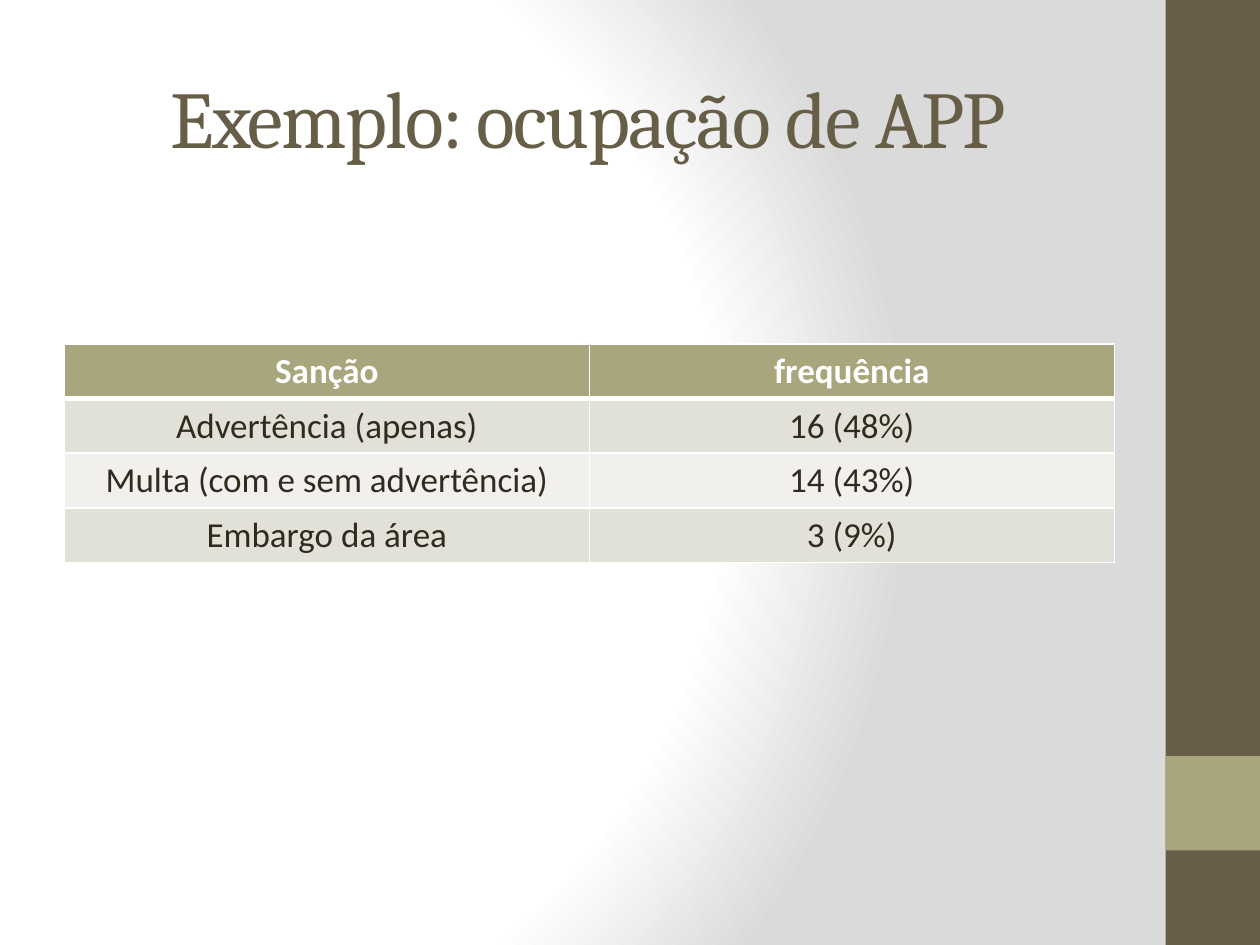
import pptx
import pptx.util
import pptx.dml.color
import pptx.enum.shapes
import pptx.enum.text
import pptx.oxml
import pptx.oxml.ns

Pt = pptx.util.Pt
ALIGN = pptx.enum.text.PP_ALIGN
ANCHOR = pptx.enum.text.MSO_ANCHOR
RECT = pptx.enum.shapes.MSO_SHAPE.RECTANGLE

HEX = {
    "brown": "675E47",
    "olive": "A9A57C",
    "ink": "2F2B20",
    "white": "FFFFFF",
    "gray": "DADADA",
    "dark": "E2E1D7",
    "light": "F1F0EC",
}
ROWS = [
    ("Sanção", "frequência"),
    ("Advertência (apenas)", "16 (48%)"),
    ("Multa (com e sem advertência)", "14 (43%)"),
    ("Embargo da área", "3 (9%)"),
]


def rgb(name):
    return pptx.dml.color.RGBColor.from_string(HEX[name])


def node(text):
    space = pptx.oxml.ns.nsdecls("a")
    return pptx.oxml.parse_xml(text.replace(">", f" {space}>", 1))


def style(para, font, size, color, bold=False):
    para.alignment = ALIGN.CENTER
    for run in para.runs:
        run.font.name = font
        run.font.size = Pt(size)
        run.font.bold = bold
        run.font.color.rgb = rgb(color)


def backdrop(slide):
    # Radial fade from white to gray
    fill = slide.background.fill
    fill.gradient()
    stops = "".join(
        f'<a:gs pos="{pos}000"><a:srgbClr val="{HEX[name]}"/></a:gs>'
        for pos, name in ((0, "white"), (75, "white"), (100, "gray")))
    fade = node(
        f'<a:gradFill rotWithShape="1"><a:gsLst>{stops}</a:gsLst>'
        '<a:path path="circle"><a:fillToRect l="20000" t="50000" '
        'r="100000" b="50000"/></a:path></a:gradFill>')
    old = slide.element.find(".//" + pptx.oxml.ns.qn("a:gradFill"))
    old.getparent().replace(old, fade)


def sidebar(slide, left, top, width, height):
    # Full band, with a square accent one side above its foot
    accent = top + height - 2 * width
    for y, tall, color in ((top, height, "brown"), (accent, width, "olive")):
        band = slide.shapes.add_shape(
            RECT, Pt(left), Pt(y), Pt(width), Pt(tall))
        band.shadow.inherit = False
        band.fill.solid()
        band.fill.fore_color.rgb = rgb(color)
        band.line.fill.background()


def title(slide, left, top, width, height):
    box = slide.shapes.add_textbox(Pt(left), Pt(top), Pt(width), Pt(height))
    frame = box.text_frame
    frame.word_wrap = True
    frame.vertical_anchor = ANCHOR.MIDDLE
    frame.text = "Exemplo: ocupação de APP"
    para = frame.paragraphs[0]
    style(para, "Cambria", 46, "brown")
    # Tighten letter spacing by one point
    para.runs[0].font._element.set("spc", "-100")


def border(cell, foot):
    props = cell._tc.get_or_add_tcPr()
    sides = (("L", 1), ("R", 1), ("T", 1), ("B", foot))
    for spot, (side, wide) in enumerate(sides):
        props.insert(spot, node(
            f'<a:ln{side} w="{Pt(wide)}"><a:solidFill>'
            f'<a:srgbClr val="{HEX["white"]}"/></a:solidFill></a:ln{side}>'))


def table(slide, left, top, width, height):
    grid = slide.shapes.add_table(
        len(ROWS), len(ROWS[0]),
        Pt(left), Pt(top), Pt(width), Pt(height)).table
    for r, row in enumerate(ROWS):
        head = r == 0
        back = "olive" if head else "dark" if r % 2 else "light"
        for c, text in enumerate(row):
            cell = grid.cell(r, c)
            cell.text_frame.text = text
            style(cell.text_frame.paragraphs[0], "Calibri", 20,
                  "white" if head else "ink", head)
            cell.fill.solid()
            cell.fill.fore_color.rgb = rgb(back)
            border(cell, 3 if head else 1)
            if r == 1:
                # Match the heavy rule under the heading
                cell._tc.tcPr[2].set("w", str(Pt(3)))


def main():
    deck = pptx.Presentation()
    deck.slide_width, deck.slide_height = Pt(720), Pt(540)
    slide = deck.slides.add_slide(deck.slide_layouts[6])
    backdrop(slide)
    sidebar(slide, 666, 0, 54, 540)
    title(slide, 36, 21.6, 600, 90)
    table(slide, 36.8, 196.5, 600, 124.8)
    deck.save("out.pptx")


if __name__ == "__main__":
    main()
